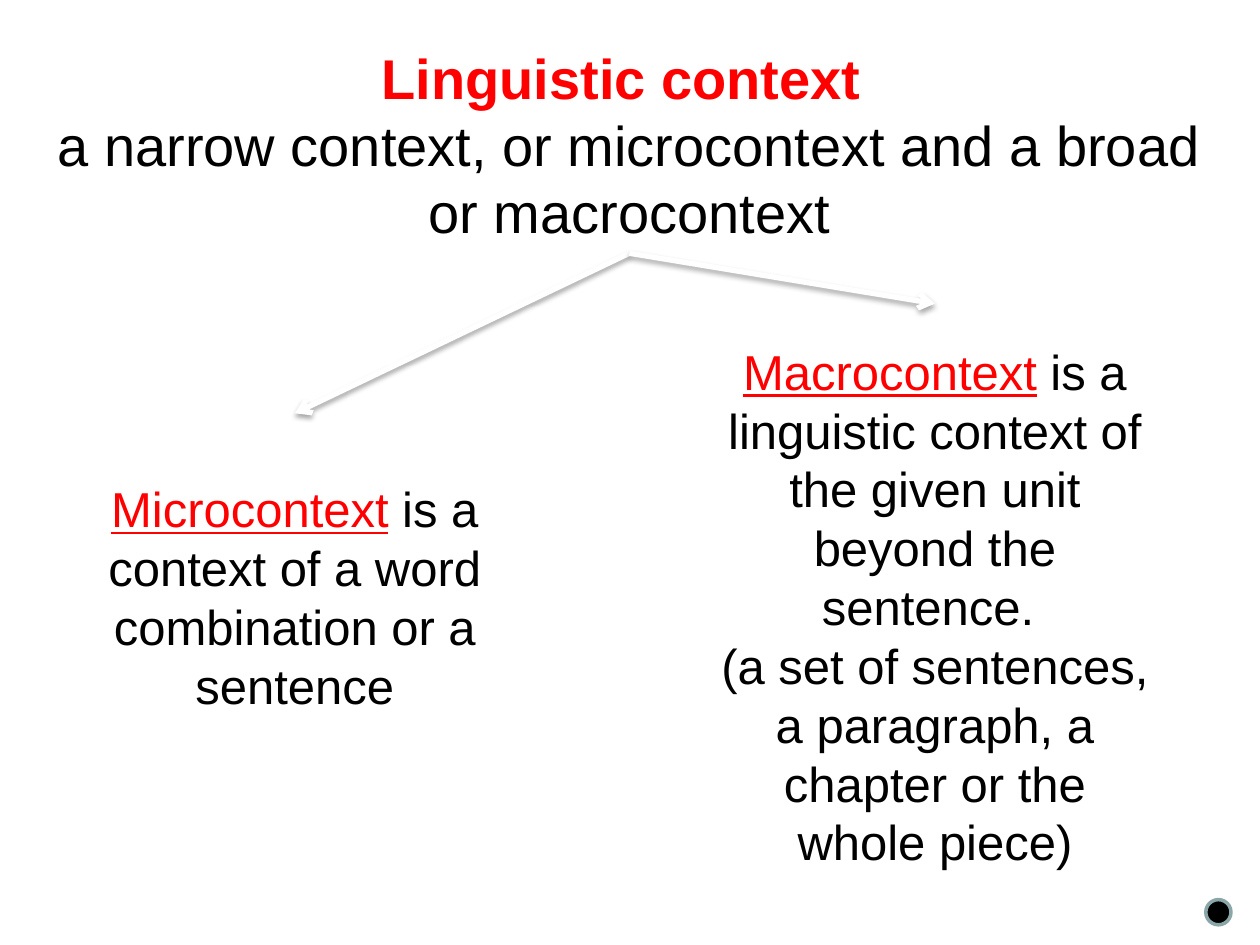
import pptx
import pptx.dml.color
import pptx.enum.shapes
import pptx.enum.text
import pptx.oxml
import pptx.oxml.ns
import pptx.util
from pptx.util import Inches

RGBColor = pptx.dml.color.RGBColor
MSO_SHAPE = pptx.enum.shapes.MSO_SHAPE
WHITE = RGBColor(0xFF, 0xFF, 0xFF)
BLACK = RGBColor(0x00, 0x00, 0x00)
RED = RGBColor(0xFF, 0x00, 0x00)
GREY_TEAL = RGBColor(0x8A, 0xA6, 0xA8)

FONT = "Arial"
NS = pptx.oxml.ns.nsdecls("a")
BOX_LEFT = 0.31
BOX_WIDTH = 4.06


def add_run(p, text, size=28, color=BLACK, bold=False, underline=False):
    r = p.add_run()
    r.text = text
    r.font.name = FONT
    r.font.size = pptx.util.Pt(size)
    r.font.color.rgb = color
    r.font.bold = bold
    r.font.underline = underline


def write_text(sp, paragraphs):
    """Fill a shape with centred paragraphs, each a list of (text, format)."""
    tf = sp.text_frame
    tf.word_wrap = True
    tf.auto_size = pptx.enum.text.MSO_AUTO_SIZE.NONE
    tf.vertical_anchor = pptx.enum.text.MSO_ANCHOR.MIDDLE
    for i, runs in enumerate(paragraphs):
        p = tf.add_paragraph() if i else tf.paragraphs[0]
        p.alignment = pptx.enum.text.PP_ALIGN.CENTER
        for text, fmt in runs:
            add_run(p, text, **fmt)


def paint(sp, fill, line):
    sp.fill.solid()
    sp.fill.fore_color.rgb = fill
    sp.line.color.rgb = line
    sp.line.width = pptx.util.Pt(2)
    sp.shadow.inherit = False


def add_shape(shapes, kind, left, top, width, height, fill=WHITE, line=WHITE):
    sp = shapes.add_shape(kind, Inches(left), Inches(top),
                          Inches(width), Inches(height))
    paint(sp, fill, line)
    return sp


def format_title(sp, paragraphs):
    sp.left, sp.top = Inches(BOX_LEFT), Inches(0.28)
    sp.width, sp.height = Inches(9.37), Inches(1.73)
    # Rounded outline, placed right after the position
    sp._element.spPr.insert(1, pptx.oxml.parse_xml(
        f'<a:prstGeom {NS} prst="roundRect"><a:avLst/></a:prstGeom>'))
    paint(sp, WHITE, WHITE)
    write_text(sp, paragraphs)


def add_arrow(shapes, start, end):
    """Shadowed arrow from the bottom of start to the top of end."""
    line = shapes.add_connector(
        pptx.enum.shapes.MSO_CONNECTOR.STRAIGHT,
        start.left + start.width // 2, start.top + start.height,
        end.left + end.width // 2, end.top)
    line.begin_connect(start, 2)
    line.end_connect(end, 0)
    line.line.color.rgb = WHITE
    line.line.width = pptx.util.Pt(3)
    line.line._get_or_add_ln().append(
        pptx.oxml.parse_xml(f'<a:tailEnd {NS} type="arrow"/>'))
    blur, dist = pptx.util.Pt(3.1), pptx.util.Pt(1.8)
    line._element.spPr.append(pptx.oxml.parse_xml(
        f'<a:effectLst {NS}><a:outerShdw blurRad="{blur}" dist="{dist}" '
        f'dir="5400000" rotWithShape="0"><a:srgbClr val="{BLACK}">'
        '<a:alpha val="35000"/></a:srgbClr></a:outerShdw></a:effectLst>'))


def add_branch(s, title, left, top, height, paragraphs):
    """Group of a definition box and the arrow leading to it."""
    shapes = s.shapes.add_group_shape().shapes
    box = add_shape(shapes, MSO_SHAPE.ROUNDED_RECTANGLE,
                    left, top, BOX_WIDTH, height)
    write_text(box, paragraphs)
    add_arrow(shapes, title, box)


def main():
    prs = pptx.Presentation()
    prs.slide_width, prs.slide_height = Inches(10), Inches(7.5)
    s = prs.slides.add_slide(prs.slide_layouts[5])

    # Heading
    title = s.shapes.title
    format_title(title, [
        [("Linguistic context ", dict(size=32, color=RED, bold=True))],
        [("a narrow context, or microcontext and a broad or macrocontext",
          dict(size=32))],
    ])

    # Two kinds of context
    term = dict(color=RED, underline=True)
    add_branch(s, title, BOX_LEFT, 3.28, 2.91, [
        [("Microcontext", term),
         (" is a context of a word combination or a sentence", {})],
    ])
    add_branch(s, title, 5.39, 2.41, 4.8, [
        [("Macrocontext", term),
         (" is a linguistic context of the given unit beyond the sentence. ",
          {})],
        [("(a set of sentences, a paragraph, a chapter or the whole piece)",
          {})],
    ])

    # Corner dot
    add_shape(s.shapes, MSO_SHAPE.OVAL, 9.57, 7.14, 0.2, 0.2,
              fill=BLACK, line=GREY_TEAL)

    prs.save("out.pptx")


if __name__ == "__main__":
    main()
